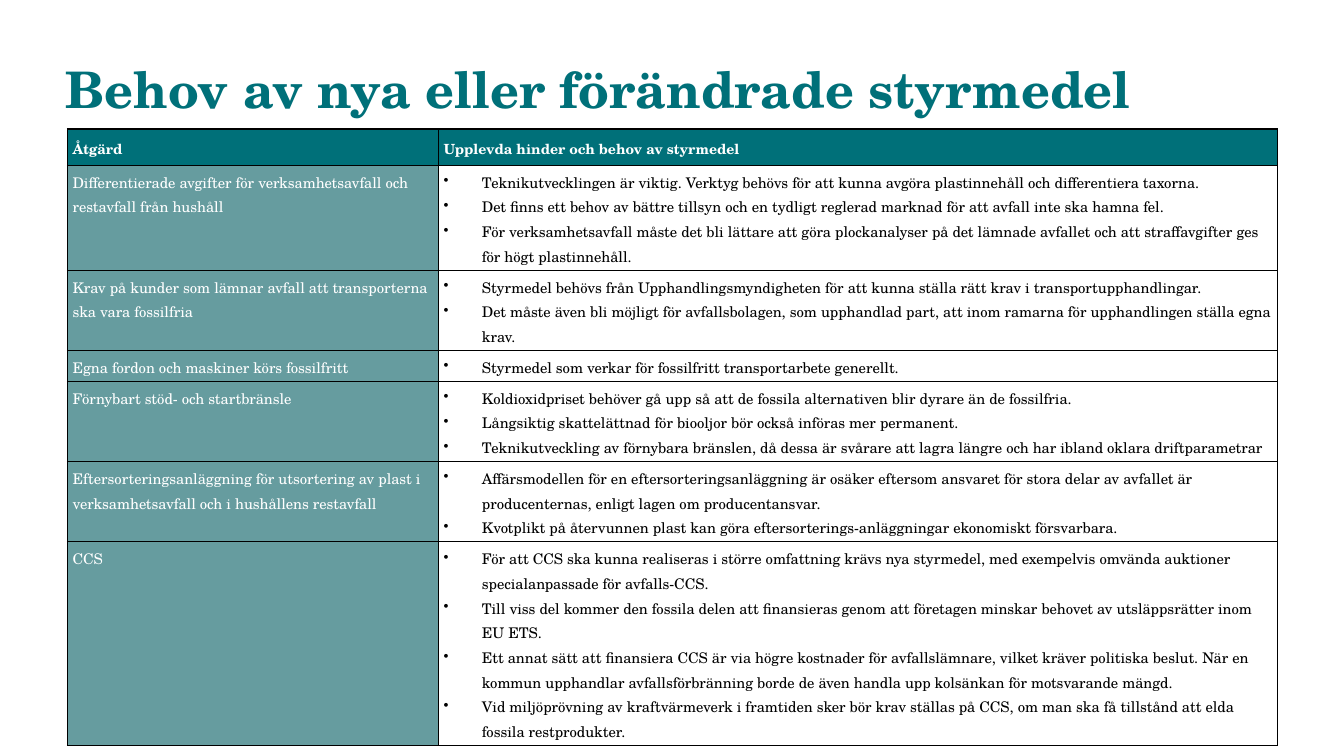
from dataclasses import dataclass

from lxml import etree
from pptx import Presentation
from pptx.dml.color import RGBColor
from pptx.enum.text import MSO_ANCHOR, MSO_AUTO_SIZE, PP_ALIGN
from pptx.oxml.ns import qn
from pptx.util import Emu, Pt

MIDDLE = MSO_ANCHOR.MIDDLE
TOP = MSO_ANCHOR.TOP
LEFT = PP_ALIGN.LEFT
FIXED = MSO_AUTO_SIZE.NONE

SCALE = 9144
FONT = "TeX Gyre Schola"
TEAL = RGBColor(0x00, 0x70, 0x79)
SAGE = RGBColor(0x66, 0x9C, 0x9F)
WHITE = RGBColor(0xFF, 0xFF, 0xFF)
BLACK = RGBColor(0x00, 0x00, 0x00)
WIDTHS = (368, 832)
HEAD = ("Åtgärd", "Upplevda hinder och behov av styrmedel")
HEAD_H = 36


@dataclass(frozen=True)
class Action:
    name: str
    height: int
    needs: tuple[str, ...]


@dataclass(frozen=True)
class Look:
    size: float
    color: RGBColor
    bold: bool = False
    fill: RGBColor | None = None
    anchor: MSO_ANCHOR = TOP
    bullet: bool = False


HEADER = Look(10, WHITE, bold=True, fill=TEAL, anchor=MIDDLE)
LABEL = Look(10.5, WHITE, fill=SAGE)
NEED = Look(10.5, BLACK, bullet=True)

ACTIONS = (
    Action("Differentierade avgifter för verksamhetsavfall och restavfall från hushåll", 79, (
        "Teknikutvecklingen är viktig. Verktyg behövs för att kunna avgöra plastinnehåll och differentiera taxorna.",
        "Det finns ett behov av bättre tillsyn och en tydligt reglerad marknad för att avfall inte ska hamna fel.",
        "För verksamhetsavfall måste det bli lättare att göra plockanalyser på det lämnade avfallet "
        "och att straffavgifter ges för högt plastinnehåll.",
    )),
    Action("Krav på kunder som lämnar avfall att transporterna ska vara fossilfria", 57, (
        "Styrmedel behövs från Upphandlingsmyndigheten för att kunna ställa rätt krav i transportupphandlingar.",
        "Det måste även bli möjligt för avfallsbolagen, som upphandlad part, att inom ramarna "
        "för upphandlingen ställa egna krav.",
    )),
    Action("Egna fordon och maskiner körs fossilfritt", 26, (
        "Styrmedel som verkar för fossilfritt transportarbete generellt.",
    )),
    Action("Förnybart stöd- och startbränsle", 79, (
        "Koldioxidpriset behöver gå upp så att de fossila alternativen blir dyrare än de fossilfria.",
        "Långsiktig skattelättnad för biooljor bör också införas mer permanent.",
        "Teknikutveckling av förnybara bränslen, då dessa är svårare att lagra längre "
        "och har ibland oklara driftparametrar",
    )),
    Action("Eftersorteringsanläggning för utsortering av plast i verksamhetsavfall och i hushållens restavfall", 57, (
        "Affärsmodellen för en eftersorteringsanläggning är osäker eftersom ansvaret för stora delar "
        "av avfallet är producenternas, enligt lagen om producentansvar.",
        "Kvotplikt på återvunnen plast kan göra eftersorterings-anläggningar ekonomiskt försvarbara.",
    )),
    Action("CCS", 142, (
        "För att CCS ska kunna realiseras i större omfattning krävs nya styrmedel, med exempelvis "
        "omvända auktioner specialanpassade för avfalls-CCS.",
        "Till viss del kommer den fossila delen att finansieras genom att företagen minskar behovet "
        "av utsläppsrätter inom EU ETS.",
        "Ett annat sätt att finansiera CCS är via högre kostnader för avfallslämnare, vilket kräver "
        "politiska beslut. När en kommun upphandlar avfallsförbränning borde de även handla upp "
        "kolsänkan för motsvarande mängd.",
        "Vid miljöprövning av kraftvärmeverk i framtiden sker bör krav ställas på CCS, om man ska få "
        "tillstånd att elda fossila restprodukter.",
    )),
)


def px(n: int) -> Emu:
    return Emu(n * SCALE)


def add_run(para, text: str, size: float, color: RGBColor, bold: bool) -> None:
    run = para.add_run()
    run.text = text
    font = run.font
    font.name, font.size, font.bold = FONT, Pt(size), bold
    font.color.rgb = color


def add_edges(cell) -> None:
    props = cell._tc.get_or_add_tcPr()
    for side in ("lnL", "lnR", "lnT", "lnB"):
        line = etree.SubElement(props, qn(f"a:{side}"), w=str(Pt(1)))
        fill = etree.SubElement(line, qn("a:solidFill"))
        etree.SubElement(fill, qn("a:srgbClr"), val=str(BLACK))


def add_bullet(para) -> None:
    props = para._p.get_or_add_pPr()
    props.set("marL", str(px(38)))
    props.set("indent", str(px(-38)))
    etree.SubElement(props, qn("a:buChar"), char="•")


def fill_cell(cell, lines: tuple[str, ...], look: Look) -> None:
    add_edges(cell)
    if look.fill is None:
        cell.fill.background()
    else:
        cell.fill.solid()
        cell.fill.fore_color.rgb = look.fill
    cell.margin_left = cell.margin_right = px(5)
    cell.margin_top = cell.margin_bottom = px(3)
    cell.vertical_anchor = look.anchor
    frame = cell.text_frame
    for i, text in enumerate(lines):
        para = frame.add_paragraph() if i else frame.paragraphs[0]
        if look.bullet:
            add_bullet(para)
        para.line_spacing = 1.15
        para.space_after = Pt(10 if i == len(lines) - 1 else 0)
        add_run(para, text, look.size, look.color, look.bold)


def add_title(slide) -> None:
    title = slide.shapes.title
    title.left, title.top, title.width, title.height = map(px, (55, 56, 1221, 70))
    frame = title.text_frame
    frame.auto_size = FIXED
    frame.vertical_anchor = MIDDLE
    para = frame.paragraphs[0]
    para.alignment = LEFT
    para.line_spacing = 0.9
    add_run(para, "Behov av nya eller förändrade styrmedel", 36, TEAL, True)


def add_grid(slide) -> None:
    high = HEAD_H + sum(a.height for a in ACTIONS)
    grid = slide.shapes.add_table(
        len(ACTIONS) + 1, len(WIDTHS), px(67), px(128), px(sum(WIDTHS)), px(high)
    ).table
    grid.horz_banding = False
    for col, width in zip(grid.columns, WIDTHS):
        col.width = px(width)
    grid.rows[0].height = px(HEAD_H)
    for i, text in enumerate(HEAD):
        fill_cell(grid.cell(0, i), (text,), HEADER)
    for i, act in enumerate(ACTIONS, 1):
        grid.rows[i].height = px(act.height)
        fill_cell(grid.cell(i, 0), (act.name,), LABEL)
        fill_cell(grid.cell(i, 1), act.needs, NEED)


def main() -> None:
    deck = Presentation()
    deck.slide_width, deck.slide_height = px(1333), px(750)
    slide = deck.slides.add_slide(deck.slide_layouts[5])
    add_title(slide)
    add_grid(slide)
    deck.save("out.pptx")


if __name__ == "__main__":
    main()
